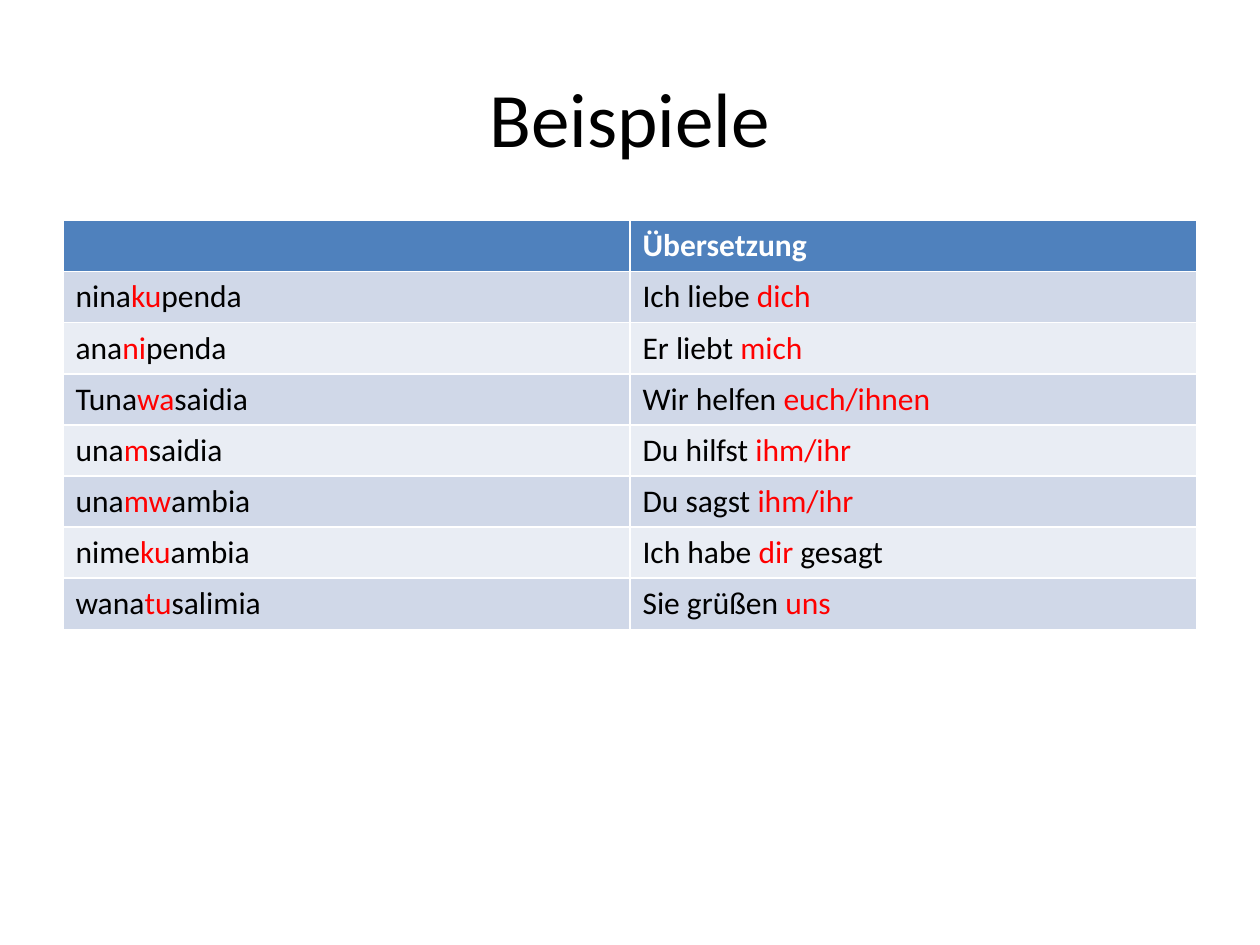
"""Build a slide with a table of Swahili object-infix examples and their German translations."""
from pptx import Presentation
from pptx import util as u
from pptx.dml.color import RGBColor
from pptx.enum import text

BLACK = RGBColor(0x00, 0x00, 0x00)
WHITE = RGBColor(0xFF, 0xFF, 0xFF)
RED = RGBColor(0xFF, 0x00, 0x00)
HEADER_BLUE = RGBColor(0x4F, 0x81, 0xBD)
BANDS = (RGBColor(0xD0, 0xD8, 0xE8), RGBColor(0xE9, 0xED, 0xF4))
FONT = "Calibri"

TITLE = "Beispiele"
HEADINGS = ("", "Übersetzung")
EXAMPLES = [
    (("nina", "ku", "penda"), ("Ich liebe ", "dich")),
    (("ana", "ni", "penda"), ("Er liebt ", "mich")),
    (("Tuna", "wa", "saidia"), ("Wir helfen ", "euch/ihnen")),
    (("una", "m", "saidia"), ("Du hilfst", " ihm/ihr")),
    (("una", "mw", "ambia"), ("Du sagst ", "ihm/ihr")),
    (("nime", "ku", "ambia"), ("Ich habe ", "dir", " gesagt")),
    (("wana", "tu", "salimia"), ("Sie grüßen ", "uns")),
]


def fill_cell(cell, parts, colors, background, bold):
    cell.fill.solid()
    cell.fill.fore_color.rgb = background
    paragraph = cell.text_frame.paragraphs[0]
    paragraph.font.name = FONT
    paragraph.font.size = u.Pt(18)
    paragraph.font.bold = bold
    for part, color in zip(parts, colors):
        run = paragraph.add_run()
        run.text = part
        run.font.color.rgb = color


def add_title(slide):
    title = slide.shapes.title
    title.left, title.top = u.Inches(0.5), u.Inches(0.3)
    title.width, title.height = u.Inches(9), u.Inches(1.25)
    title.text_frame.text = TITLE
    title.text_frame.vertical_anchor = text.MSO_ANCHOR.MIDDLE
    heading = title.text_frame.paragraphs[0]
    heading.alignment = text.PP_ALIGN.CENTER
    heading.font.name = FONT
    heading.font.size = u.Pt(44)
    heading.font.color.rgb = BLACK


def add_examples(slide):
    table = slide.shapes.add_table(
        len(EXAMPLES) + 1, len(HEADINGS),
        u.Inches(0.5), u.Inches(1.75), u.Inches(9), u.Inches(3.24),
    ).table
    for column, heading in enumerate(HEADINGS):
        parts = (heading,) if heading else ()
        fill_cell(table.cell(0, column), parts, (WHITE,), HEADER_BLUE, True)
    for index, example in enumerate(EXAMPLES):
        for column, parts in enumerate(example):
            fill_cell(table.cell(index + 1, column), parts,
                      (BLACK, RED, BLACK), BANDS[index % 2], False)


def main():
    deck = Presentation()
    deck.slide_width, deck.slide_height = u.Inches(10), u.Inches(7.5)
    slide = deck.slides.add_slide(deck.slide_layouts.get_by_name("Title Only"))
    add_title(slide)
    add_examples(slide)
    deck.save("out.pptx")


if __name__ == "__main__":
    main()
